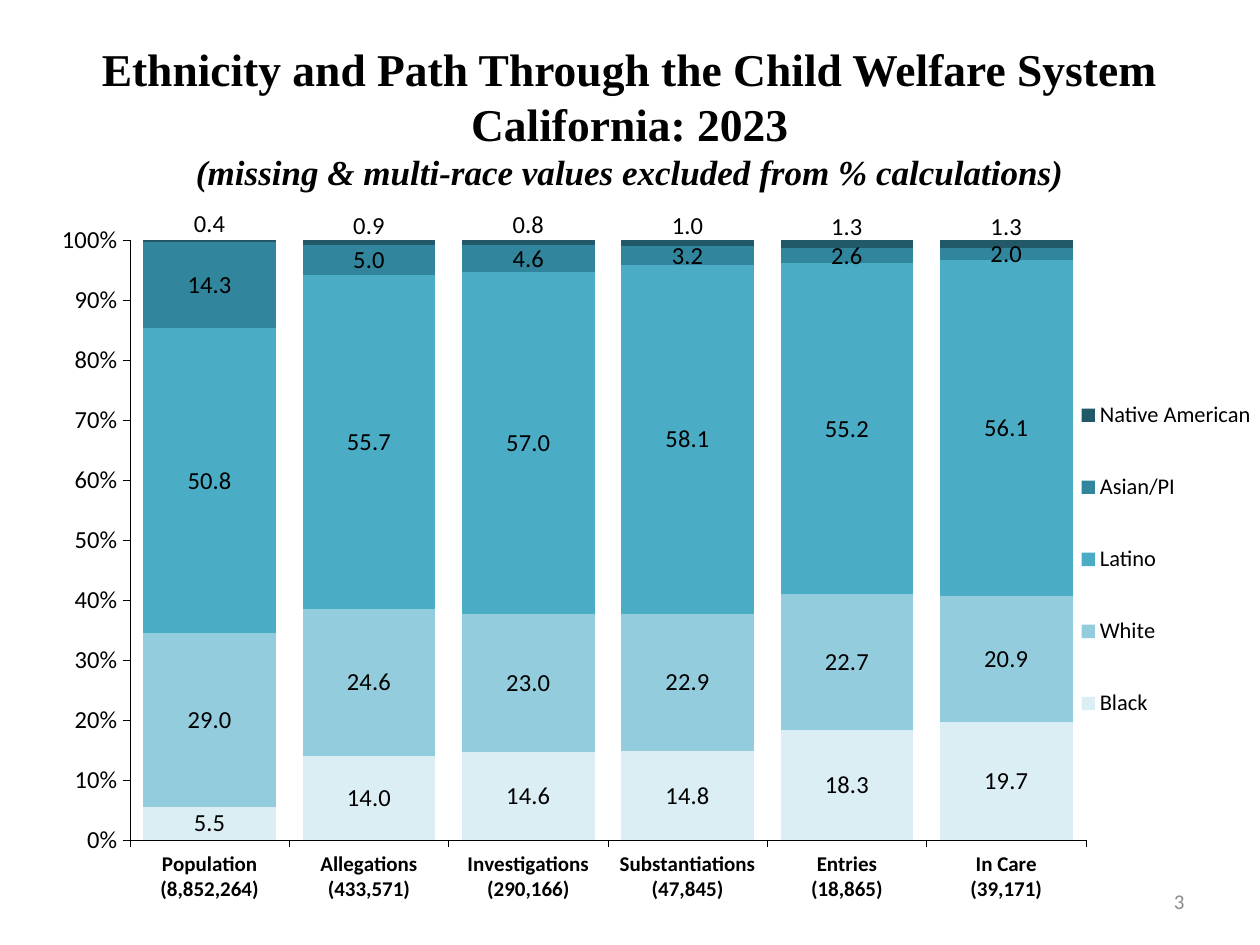
import pptx
import pptx.chart.data
import pptx.dml.color
import pptx.enum.chart
import pptx.enum.text
import pptx.oxml
import pptx.oxml.ns
import pptx.util

SCALE = 914400 / 126
BODY, HEAD, BLACK = "Calibri", "Times New Roman", "000000"
TITLE = [
    ("Ethnicity and Path Through the Child Welfare System", 26, False),
    ("California: 2023", 26, False),
    ("(missing & multi-race values excluded from % calculations)", 20, True),
]
STAGES = [
    ("Population", "8,852,264"), ("Allegations", "433,571"),
    ("Investigations", "290,166"), ("Substantiations", "47,845"),
    ("Entries", "18,865"), ("In Care", "39,171"),
]
GROUPS = [
    ("Black", "DBEEF4", (5.5, 14.0, 14.6, 14.8, 18.3, 19.7)),
    ("White", "93CDDD", (29.0, 24.6, 23.0, 22.9, 22.7, 20.9)),
    ("Latino", "4BACC6", (50.8, 55.7, 57.0, 58.1, 55.2, 56.1)),
    ("Asian/PI", "31859C", (14.3, 5.0, 4.6, 3.2, 2.6, 2.0)),
    ("Native American", "215968", (0.4, 0.9, 0.8, 1.0, 1.3, 1.3)),
]
FRAME = (0, 38, 1260, 907)
PLOT = (130, 240, 956, 600)
KEY = (1074, 357, 184, 405)
LIFT = 17  # raises the top labels above their thin bars


def px(n):
    return round(n * SCALE)


def color(code):
    return pptx.dml.color.RGBColor.from_string(code)


def style(font, size, face=BODY, code=BLACK, bold=False, italic=False):
    font.size, font.name = pptx.util.Pt(size), face
    font.bold, font.italic = bold, italic
    font.color.rgb = color(code)


def add_box(slide, box, align):
    frame = slide.shapes.add_textbox(*map(px, box)).text_frame
    frame.word_wrap = True
    frame.vertical_anchor = pptx.enum.text.MSO_ANCHOR.MIDDLE
    para = frame.paragraphs[0]
    para.alignment = align
    return para


def layout(parts):
    body = "".join(f'<c:{tag} val="{val}"/>' for tag, val in parts)
    return pptx.oxml.parse_xml(
        f'<c:layout {pptx.oxml.ns.nsdecls("c")}>'
        f"<c:manualLayout>{body}</c:manualLayout></c:layout>")


def place(node, box, inner=False):
    """Fix a chart part at a slide position given in px."""
    left, top, wide, high = FRAME
    spots = ((box[0] - left) / wide, (box[1] - top) / high,
             box[2] / wide, box[3] / high)
    parts = [("layoutTarget", "inner")] if inner else []
    parts += [("xMode", "edge"), ("yMode", "edge")]
    parts += [(tag, round(val, 4)) for tag, val in zip("xywh", spots)]
    for old in node.findall(pptx.oxml.ns.qn("c:layout")):
        node.remove(old)
    node.insert(0 if inner else 1, layout(parts))


def lift_labels(series):
    """Give each point its own label, moved up by LIFT."""
    labels = series.data_labels._element
    for i in range(len(STAGES)):
        dot = pptx.oxml.parse_xml(
            f'<c:dLbl {pptx.oxml.ns.nsdecls("c")}><c:idx val="{i}"/>'
            + "".join(f'<c:{tag} val="{int(tag == "showVal")}"/>' for tag in (
                "showLegendKey", "showVal", "showCatName", "showSerName",
                "showPercent", "showBubbleSize")) + "</c:dLbl>")
        dot.insert(1, layout([("x", 0), ("y", round(-LIFT / FRAME[3], 4))]))
        labels.insert(i, dot)


def style_axis(axis, size, bold=False):
    style(axis.tick_labels.font, size, bold=bold)
    axis.has_major_gridlines = False
    axis.major_tick_mark = pptx.enum.chart.XL_TICK_MARK.OUTSIDE
    axis.format.line.color.rgb = color(BLACK)
    axis.format.line.width = pptx.util.Pt(0.25)


def add_chart(slide):
    data = pptx.chart.data.CategoryChartData(number_format="0.0")
    data.categories = [f"{name}\n({count})" for name, count in STAGES]
    for name, _, vals in GROUPS:
        data.add_series(name, vals)
    kind = pptx.enum.chart.XL_CHART_TYPE.COLUMN_STACKED_100
    chart = slide.shapes.add_chart(kind, *map(px, FRAME), data).chart
    chart.has_title = False
    style(chart.font, 11.2, HEAD)

    plot = chart.plots[0]
    plot.gap_width, plot.overlap = 20, 100
    plot.vary_by_categories = False
    for series, (_, code, _) in zip(plot.series, GROUPS):
        series.format.fill.solid()
        series.format.fill.fore_color.rgb = color(code)
        labels = series.data_labels
        labels.show_value = True
        labels.number_format, labels.number_format_is_linked = "0.0", False
        style(labels.font, 14)
    lift_labels(plot.series[-1])

    style_axis(chart.category_axis, 12, bold=True)
    style_axis(chart.value_axis, 14)
    chart.value_axis.major_unit = 0.1
    ticks = chart.value_axis.tick_labels
    ticks.number_format, ticks.number_format_is_linked = "0%", False

    chart.has_legend = True
    chart.legend.position = pptx.enum.chart.XL_LEGEND_POSITION.RIGHT
    chart.legend.include_in_layout = False
    style(chart.legend.font, 12.8)
    place(chart.legend._element, KEY)
    place(chart._chartSpace.chart.plotArea, PLOT, inner=True)


def main():
    deck = pptx.Presentation()
    deck.slide_width, deck.slide_height = px(1260), px(945)
    slide = deck.slides.add_slide(deck.slide_layouts[6])
    add_chart(slide)

    align = pptx.enum.text.PP_ALIGN
    para = add_box(slide, (63, 38, 1134, 158), align.CENTER)
    for i, (text, size, italic) in enumerate(TITLE):
        if i:
            para.add_line_break()
        run = para.add_run()
        run.text = text
        style(run.font, size, HEAD, bold=True, italic=italic)

    run = add_box(slide, (903, 876, 294, 50), align.RIGHT).add_run()
    run.text = "3"
    style(run.font, 12, code="8C8C8C")
    deck.save("out.pptx")


if __name__ == "__main__":
    main()
